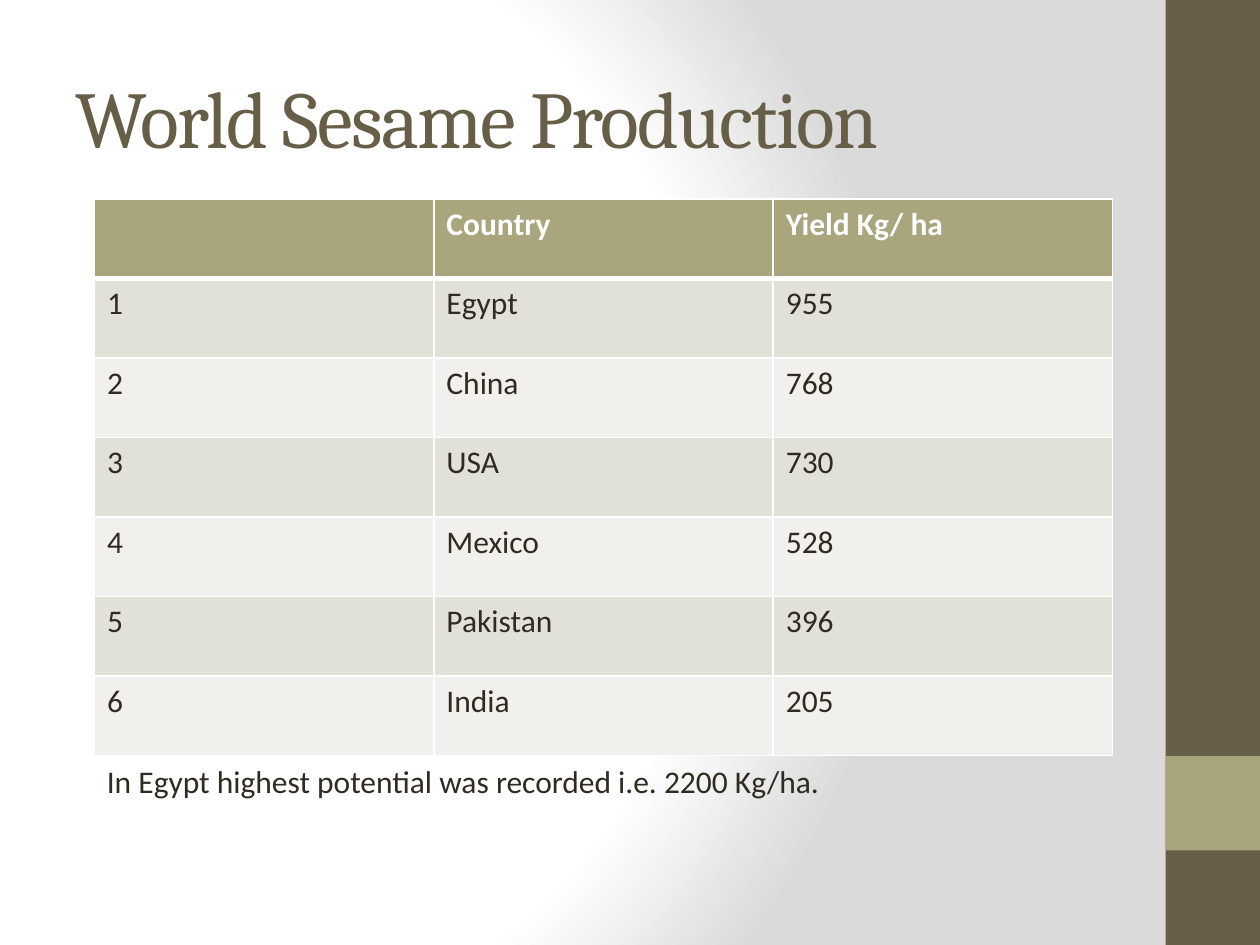
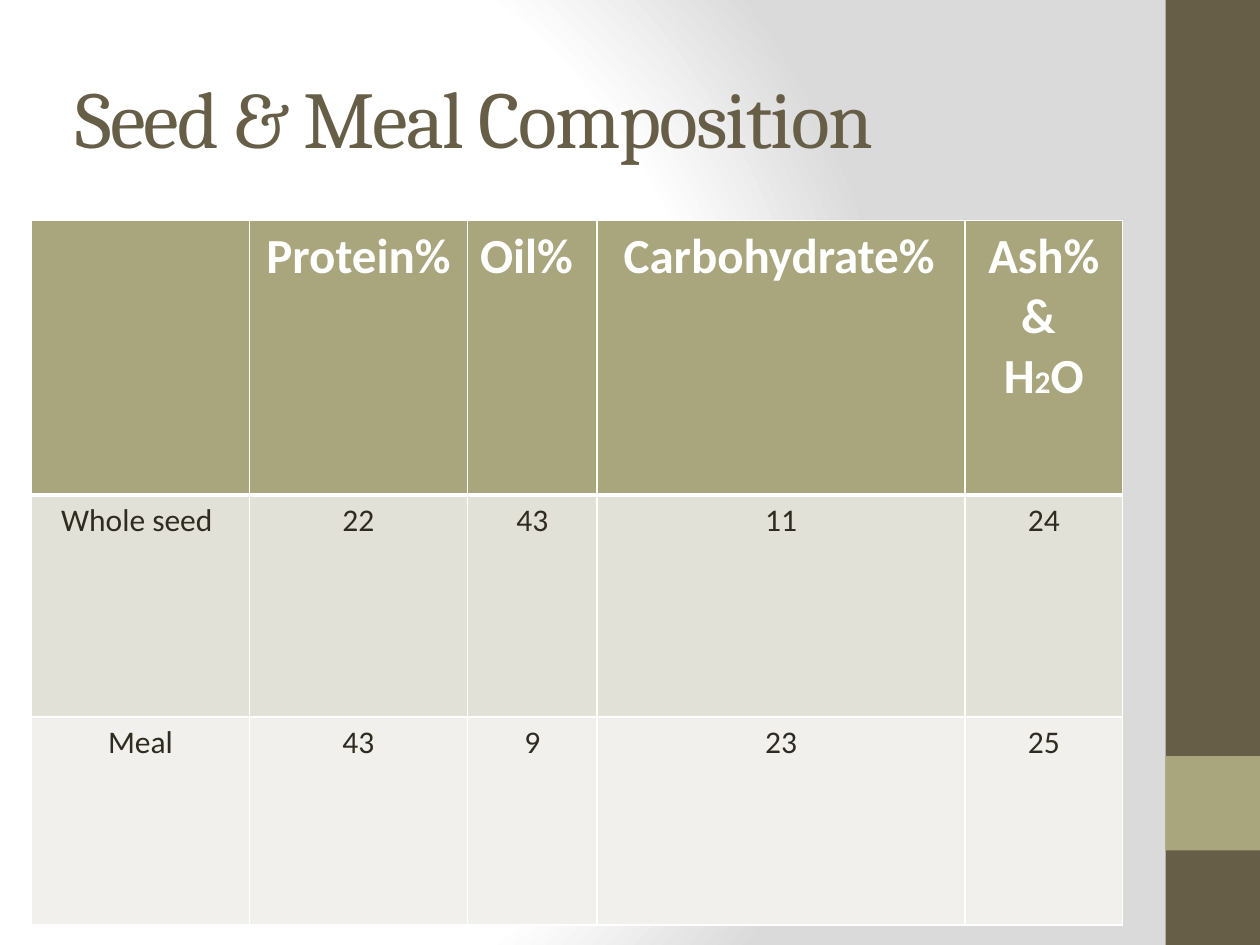
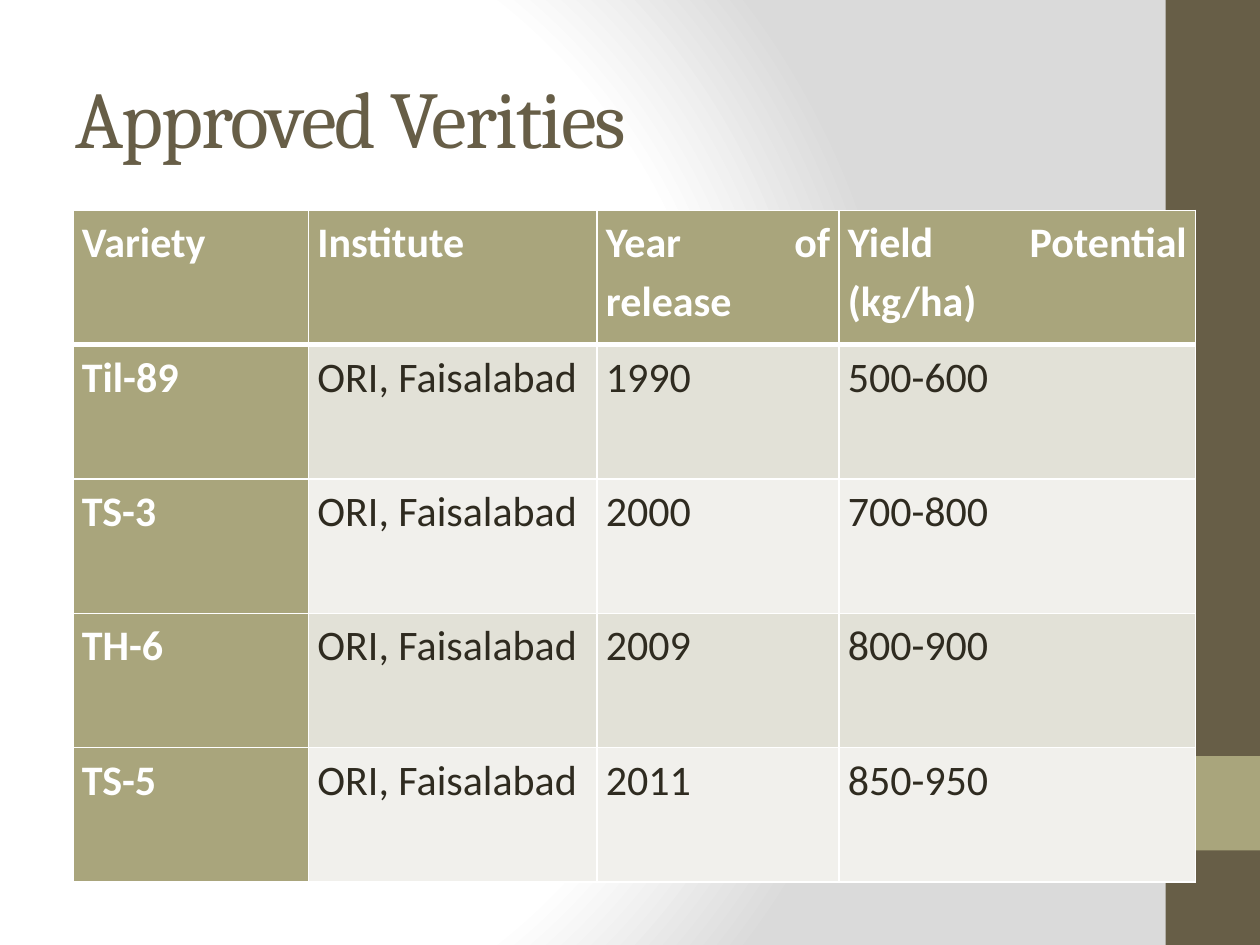
from pptx import Presentation
from pptx.dml.color import RGBColor
from pptx.enum import shapes, text
from pptx.oxml import parse_xml
from pptx.oxml.ns import nsdecls
from pptx.util import Inches, Pt

# Shared look
BROWN, OLIVE, WHITE, INK = "675E47", "A9A57C", "FFFFFF", "2F2B20"
BANDS = ("E2E1D7", "F1F0EC")
TITLE_FONT, BODY_FONT = "Cambria", "Calibri"
GRADIENT = ((0, WHITE), (75, WHITE), (100, "DADADA"))
SIDEBAR = (((9.25, 0, 0.75, 7.5), BROWN), ((9.25, 6, 0.75, 0.75), OLIVE))
LEFT, CENTER, JUSTIFY = text.PP_ALIGN.LEFT, text.PP_ALIGN.CENTER, text.PP_ALIGN.JUSTIFY

# Content: a cell is a string, or a list of paragraphs made of (words, size) spans
SLIDES = [
    {
        "title": "World Sesame Production",
        "at": (0.75, 1.58),
        "columns": [8.08 / 3] * 3,
        "heights": [4.42 / 7] * 7,
        "aligns": [LEFT] * 3,
        "rows": [
            ("", "Country", "Yield Kg/ ha"),
            ("1", "Egypt", "955"),
            ("2", "China", "768"),
            ("3", "USA", "730"),
            ("4", "Mexico", "528"),
            ("5", "Pakistan", "396"),
            ("6", "India", "205"),
        ],
        "note": "In Egypt highest potential was recorded i.e. 2200 Kg/ha.",
    },
    {
        "title": "Seed & Meal Composition",
        "at": (0.25, 1.75),
        "columns": [1.73, 1.73, 1.03, 2.92, 1.25],
        "heights": [2.18, 1.76, 1.65],
        "aligns": [CENTER] * 5,
        "rows": [
            ("", [[("Protein%", 28)]],
             [[("Oil%", 28), ("\t", 18)]],
             [[("Carbohydrate%", 28), ("\t", 18)]],
             [[("Ash%& ", 28)], [("H", 28), ("2", 18), ("O", 28)]]),
            ("Whole seed ", "22", "43", "11", "24"),
            ("Meal", "43", "9", "23", "25"),
        ],
    },
    {
        "title": "Approved Verities",
        "at": (0.58, 1.67),
        "columns": [1.87, 2.29, 1.92, 2.83],
        "heights": [5.33 / 5] * 5,
        "aligns": [LEFT, LEFT, JUSTIFY, JUSTIFY],
        "size": 24,
        "line_spacing": 1.15,
        "insets": (0.07, 0, 0.07, 0),
        "header_column": True,
        "rows": [
            ("Variety", "Institute", "Year of release", "Yield Potential (kg/ha)"),
            ("Til-89", "ORI, Faisalabad", "1990", "500-600"),
            ("TS-3", "ORI, Faisalabad", "2000", "700-800"),
            ("TH-6", "ORI, Faisalabad", "2009", "800-900"),
            ("TS-5", "ORI, Faisalabad", "2011", "850-950"),
        ],
    },
]


def color(value):
    return RGBColor.from_string(value)


def add_span(para, words, size, ink, name=BODY_FONT, bold=False):
    span = para.add_run()
    span.text = words
    span.font.color.rgb = color(ink)
    for key, value in {"size": Pt(size), "name": name, "bold": bold}.items():
        setattr(span.font, key, value)
    return span


def add_text_box(page, at, anchor=text.MSO_ANCHOR.TOP):
    frame = page.shapes.add_textbox(*map(Inches, at)).text_frame
    frame.word_wrap = True
    frame.vertical_anchor = anchor
    return frame


def add_backdrop(page):
    stops = "".join(
        f'<a:gs pos="{place * 1000}"><a:srgbClr val="{tint}"/></a:gs>' for place, tint in GRADIENT)
    page.element.cSld.insert(0, parse_xml(
        f'<p:bg {nsdecls("p", "a")}><p:bgPr><a:gradFill rotWithShape="1"><a:gsLst>{stops}</a:gsLst>'
        '<a:path path="circle"><a:fillToRect l="20000" t="50000" r="100000" b="50000"/></a:path>'
        '</a:gradFill><a:effectLst/></p:bgPr></p:bg>'))
    for at, tint in SIDEBAR:
        band = page.shapes.add_shape(shapes.MSO_SHAPE.RECTANGLE, *map(Inches, at))
        band.shadow.inherit = False
        band.fill.solid()
        band.fill.fore_color.rgb = color(tint)
        band.line.fill.background()


def add_title(page, words):
    frame = add_text_box(page, (0.5, 0.3, 8.33, 1.25), text.MSO_ANCHOR.MIDDLE)
    span = add_span(frame.paragraphs[0], words, 46, BROWN, TITLE_FONT)
    span.font._element.set("spc", "-100")


def add_borders(cell, row):
    # A thick rule separates the header from the body
    widths = {"L": 1, "R": 1, "T": 3 if row == 1 else 1, "B": 3 if row == 0 else 1}
    properties = cell._tc.get_or_add_tcPr()
    for side, width in widths.items():
        properties.append(parse_xml(
            f'<a:ln{side} {nsdecls("a")} w="{Pt(width)}"><a:solidFill>'
            f'<a:srgbClr val="{WHITE}"/></a:solidFill></a:ln{side}>'))


def fill_cell(cell, content, row, column, slide):
    header = row == 0 or (column == 0 and slide.get("header_column", False))
    add_borders(cell, row)
    cell.fill.solid()
    cell.fill.fore_color.rgb = color(OLIVE if header else BANDS[(row - 1) % 2])
    if "insets" in slide:
        for side, inset in zip(("left", "top", "right", "bottom"), slide["insets"]):
            setattr(cell, f"margin_{side}", Inches(inset))
    if not content:
        return
    if isinstance(content, str):
        content = [[(content, slide.get("size", 18))]]
    frame = cell.text_frame
    for index, spans in enumerate(content):
        para = frame.add_paragraph() if index else frame.paragraphs[0]
        para.alignment = slide["aligns"][column]
        para.line_spacing = slide.get("line_spacing")
        for words, size in spans:
            add_span(para, words, size, WHITE if header else INK, bold=header)


def add_grid(page, slide):
    columns, heights = slide["columns"], slide["heights"]
    at = (*slide["at"], sum(columns), sum(heights))
    table = page.shapes.add_table(len(heights), len(columns), *map(Inches, at)).table
    for column, width in zip(table.columns, columns):
        column.width = Inches(width)
    for row, height in zip(table.rows, heights):
        row.height = Inches(height)
    for row, contents in enumerate(slide["rows"]):
        for column, content in enumerate(contents):
            fill_cell(table.cell(row, column), content, row, column, slide)


def main():
    deck = Presentation()
    deck.slide_width, deck.slide_height = Inches(10), Inches(7.5)
    for slide in SLIDES:
        page = deck.slides.add_slide(deck.slide_layouts[6])
        add_backdrop(page)
        add_title(page, slide["title"])
        add_grid(page, slide)
        if "note" in slide:
            frame = add_text_box(page, (0.75, 6, 7.17, 0.4))
            add_span(frame.paragraphs[0], slide["note"], 18, INK)
    deck.save("out.pptx")


if __name__ == "__main__":
    main()
